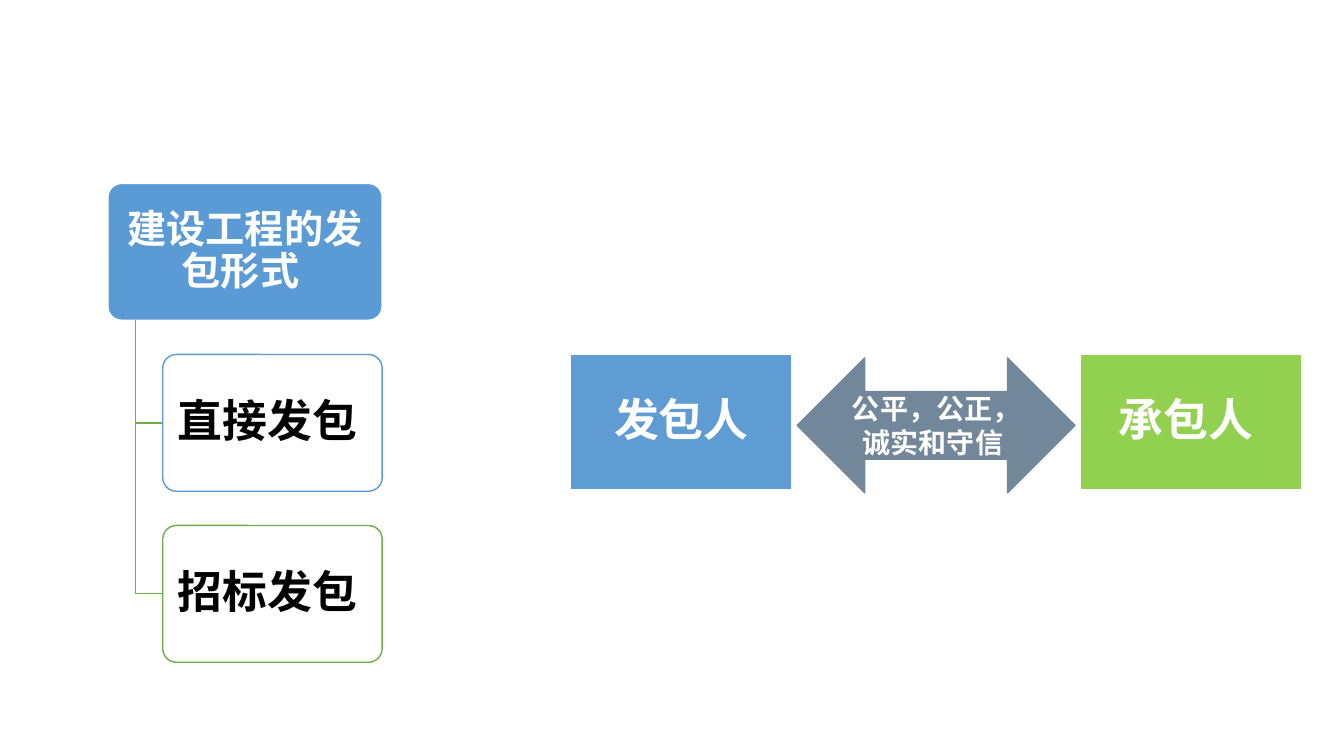
from pptx import Presentation
from pptx.dml.color import RGBColor
from pptx.enum.shapes import MSO_SHAPE
from pptx.enum.text import MSO_ANCHOR, PP_ALIGN
from pptx.util import Inches, Pt

WHITE = RGBColor(0xFF, 0xFF, 0xFF)
BLACK = RGBColor(0x00, 0x00, 0x00)
BLUE = RGBColor(0x5B, 0x9B, 0xD5)
GREEN = RGBColor(0x70, 0xAD, 0x47)
PARTY_BLUE = RGBColor(0x5E, 0x9C, 0xD3)
PARTY_GREEN = RGBColor(0x92, 0xD0, 0x50)
SLATE = RGBColor(0x72, 0x87, 0x99)
SERIF = "Times New Roman"
SANS = "Noto Sans CJK SC"


def add_block(slide, preset, box, fill, outline):
    """Add a filled preset shape at box (left, top, width, height in inches)."""
    block = slide.shapes.add_shape(preset, *map(Inches, box))
    block.shadow.inherit = False
    block.fill.solid()
    block.fill.fore_color.rgb = fill
    block.line.color.rgb = outline
    block.line.width = Pt(1)
    return block


def write_label(block, label, size, color, inset=(0.1, 0.05), font=SERIF, spacing=0.9):
    """Write one bold, centred paragraph into a block."""
    frame = block.text_frame
    frame.word_wrap = True
    frame.vertical_anchor = MSO_ANCHOR.MIDDLE
    frame.margin_left = frame.margin_right = Inches(inset[0])
    frame.margin_top = frame.margin_bottom = Inches(inset[1])
    paragraph = frame.paragraphs[0]
    paragraph.text = label
    paragraph.alignment = PP_ALIGN.CENTER
    paragraph.line_spacing = spacing
    if spacing < 1:
        paragraph.space_after = Pt(round(size * 0.35))
    paragraph.font.name = font
    paragraph.font.size = Pt(size)
    paragraph.font.bold = True
    paragraph.font.color.rgb = color


def add_branch(slide, x, top, bottom, right):
    """Draw the elbow from the heading down and across to a form."""
    elbow = slide.shapes.build_freeform(Inches(x), Inches(top))
    elbow.add_line_segments(
        [(Inches(x), Inches(bottom)), (Inches(right), Inches(bottom))], close=False)
    branch = elbow.convert_to_shape()
    branch.shadow.inherit = False
    branch.fill.background()
    branch.line.color.rgb = GREEN
    branch.line.width = Pt(1)


def add_form_tree(slide, left, top, width, height):
    """Heading with its forms below, each one indented by a fifth of the width."""
    row_height = height / 3.5  # three rows, two gaps of a quarter row
    pitch = row_height * 1.25
    indent = width * 0.2
    forms = [("直接发包 ", BLUE), ("招标发包 ", GREEN)]

    # Heading
    heading = add_block(slide, MSO_SHAPE.ROUNDED_RECTANGLE,
                        (left, top, width, row_height), BLUE, WHITE)
    heading.adjustments[0] = 0.1
    write_label(heading, "建设工程的发包形式 ", 28, WHITE, (0.02, 0))

    # Forms and their branches
    for row, (label, outline) in enumerate(forms, 1):
        form_top = top + row * pitch
        add_branch(slide, left + indent / 2, top + row_height,
                   form_top + row_height / 2, left + indent)
        form = add_block(slide, MSO_SHAPE.ROUNDED_RECTANGLE,
                         (left + indent, form_top, width - indent, row_height),
                         WHITE, outline)
        form.adjustments[0] = 0.1
        write_label(form, label, 32, BLACK, (0.03, 0))


def add_parties(slide, left, top, width, height):
    """Two parties at the ends of the box, with an arrow between them."""
    party_width = width * 0.303
    gap = 0.05
    parties = [("发包人", left, PARTY_BLUE),
               ("承包人 ", left + width - party_width, PARTY_GREEN)]
    for label, x, fill in parties:
        party = add_block(slide, MSO_SHAPE.RECTANGLE,
                          (x, top, party_width, height), fill, WHITE)
        write_label(party, label, 32, WHITE, (0.13, 0.13))

    # Shared principles
    principles = add_block(
        slide, MSO_SHAPE.LEFT_RIGHT_ARROW,
        (left + party_width + gap, top + 0.03,
         width - 2 * (party_width + gap), height), SLATE, SLATE)
    write_label(principles, "公平，公正，诚实和守信 ", 20, WHITE, font=SANS, spacing=1.0)


def main():
    deck = Presentation()
    deck.slide_width, deck.slide_height = Inches(13.33), Inches(7.5)
    slide = deck.slides.add_slide(deck.slide_layouts[6])
    add_form_tree(slide, 1.07, 1.82, 2.72, 4.75)
    add_parties(slide, 5.66, 3.52, 7.25, 1.34)
    deck.save("out.pptx")


if __name__ == "__main__":
    main()
